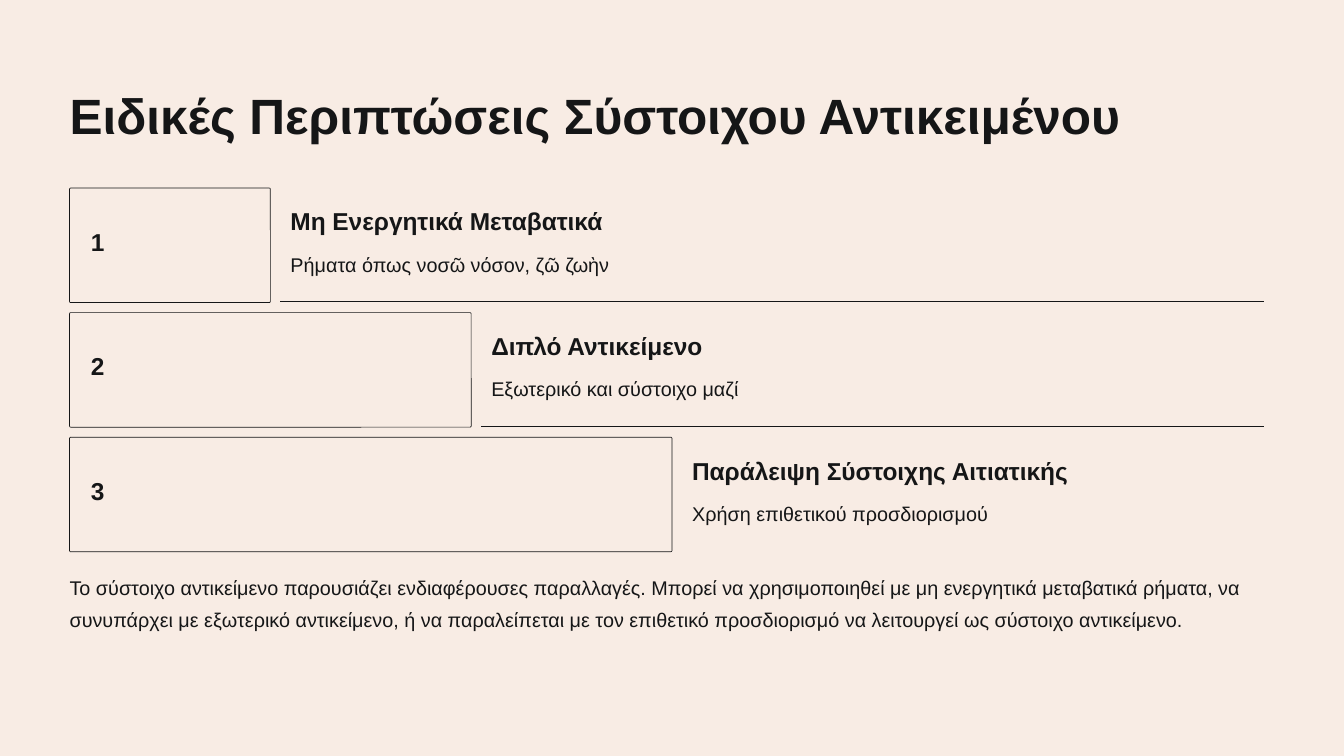
import pptx
import pptx.util
from lxml import etree
from pptx.dml.color import RGBColor
from pptx.enum.shapes import MSO_CONNECTOR, MSO_SHAPE
from pptx.enum.text import MSO_ANCHOR, MSO_AUTO_SIZE, PP_ALIGN
from pptx.oxml.ns import qn
from pptx.util import Cm, Pt

TITLE = "Ειδικές Περιπτώσεις Σύστοιχου Αντικειμένου"
CASES = [
    ("Μη Ενεργητικά Μεταβατικά", "Ρήματα όπως νοσῶ νόσον, ζῶ ζωὴν"),
    ("Διπλό Αντικείμενο", "Εξωτερικό και σύστοιχο μαζί"),
    ("Παράλειψη Σύστοιχης Αιτιατικής", "Χρήση επιθετικού προσδιορισμού"),
]
SUMMARY = (
    "Το σύστοιχο αντικείμενο παρουσιάζει ενδιαφέρουσες παραλλαγές. "
    "Μπορεί να χρησιμοποιηθεί με μη ενεργητικά μεταβατικά ρήματα, να "
    "συνυπάρχει με εξωτερικό αντικείμενο, ή να παραλείπεται με τον "
    "επιθετικό προσδιορισμό να λειτουργεί ως σύστοιχο αντικείμενο."
)

FONT = "Arial"
CREAM = RGBColor(0xF8, 0xEC, 0xE4)
INK = RGBColor(0x15, 0x16, 0x17)

# Lengths in centimetres
LEFT, RIGHT = 2.63, 47.78
FIRST_TOP, ROW_PITCH = 7.11, 4.71
BOX_STEP, BOX_HEIGHT = 7.59, 4.33
TEXT_GAP, RULE_GAP = 0.76, 0.38
TEXT_WIDTH = 16.03


def write(shape, text, size, spacing, bold=False, align=PP_ALIGN.LEFT):
    tf = shape.text_frame
    tf.text = text
    tf.word_wrap = True
    tf.auto_size = MSO_AUTO_SIZE.NONE
    tf.vertical_anchor = MSO_ANCHOR.TOP
    tf.margin_left = tf.margin_right = tf.margin_top = tf.margin_bottom = 0
    p = tf.paragraphs[0]
    p.alignment = align
    p.line_spacing = Pt(spacing)
    font = p.runs[0].font
    font.name, font.size, font.bold = FONT, Pt(size), bold
    font.color.rgb = INK


def add_text(s, x, y, w, h, *args, **kwargs):
    box = s.shapes.add_textbox(Cm(x), Cm(y), Cm(w), Cm(h))
    write(box, *args, **kwargs)


def add_box(s, x, y, w, h):
    sp = s.shapes.add_shape(MSO_SHAPE.ROUNDED_RECTANGLE, Cm(x), Cm(y), Cm(w), Cm(h))
    sp.adjustments[0] = 0.01
    sp.shadow.inherit = False
    sp.fill.solid()
    sp.fill.fore_color.rgb = CREAM
    sp.line.color.rgb = INK
    sp.line.width = Pt(0.75)


def add_rule(s, x1, x2, y):
    rule = s.shapes.add_connector(MSO_CONNECTOR.STRAIGHT, Cm(x1), Cm(y), Cm(x2), Cm(y))
    rule.line.color.rgb = INK
    rule.line.width = Pt(1.25)
    etree.SubElement(rule._element.spPr, qn("a:effectLst"))


def add_case(s, i, heading, detail):
    top = FIRST_TOP + i * ROW_PITCH
    width = BOX_STEP * (i + 1)
    text_left = LEFT + width + TEXT_GAP
    add_box(s, LEFT, top, width, BOX_HEIGHT)
    add_text(s, LEFT + 0.77, top + 1.07, 0.58, 1.85, str(i + 1), 26.2, 42.5,
             bold=True, align=PP_ALIGN.CENTER)
    add_text(s, text_left, top + 0.64, TEXT_WIDTH, 1.27, heading, 26.2, 33.1, bold=True)
    add_text(s, text_left, top + 2.14, TEXT_WIDTH, 1.45, detail, 21.2, 33.7)
    if i < len(CASES) - 1:
        add_rule(s, LEFT + width + RULE_GAP, RIGHT, top + 4.3)


def main():
    prs = pptx.Presentation()
    prs.slide_width, prs.slide_height = Cm(50.8), Cm(28.58)
    s = prs.slides.add_slide(prs.slide_layouts[5])
    s.background.fill.solid()
    s.background.fill.fore_color.rgb = CREAM

    title = s.shapes.title
    title.left, title.top = Cm(LEFT), Cm(3.12)
    title.width, title.height = Cm(44.12), Cm(2.49)
    write(title, TITLE, 53.1, 66.2, bold=True)

    for i, (heading, detail) in enumerate(CASES):
        add_case(s, i, heading, detail)
    add_text(s, LEFT, 21.49, 45.54, 3.86, SUMMARY, 21.2, 33.7)
    prs.save("out.pptx")


if __name__ == "__main__":
    main()
